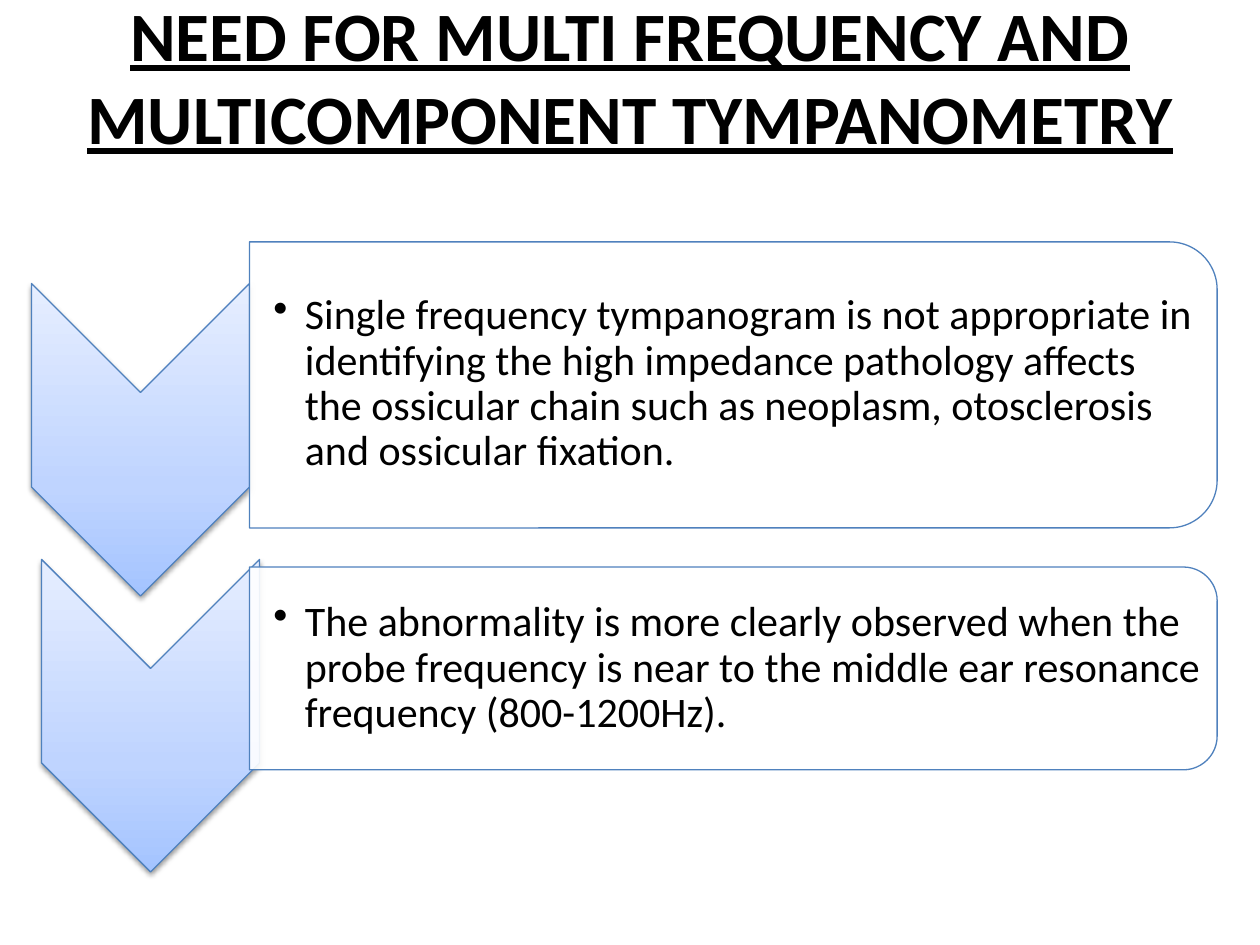
import pptx
import pptx.util
import pptx.oxml
import pptx.oxml.ns
import pptx.dml.color
import pptx.enum.shapes
import pptx.enum.text

Inches = pptx.util.Inches
Pt = pptx.util.Pt
Shapes = pptx.enum.shapes.MSO_SHAPE
Middle = pptx.enum.text.MSO_ANCHOR.MIDDLE
NAMESPACE = 'xmlns:a="http://schemas.openxmlformats.org/drawingml/2006/main"'

TITLE = "NEED FOR MULTI FREQUENCY AND MULTICOMPONENT TYMPANOMETRY\v"
STEPS = [
    {
        "text": "Single frequency tympanogram is not appropriate in identifying the high "
                "impedance pathology affects the ossicular chain such as neoplasm, "
                "otosclerosis and ossicular fixation.",
        "chevron": (0.25, 2.25), "panel": (1.98, 1.92, 7.68, 2.27), "words": (1.98, 2.03, 7.57, 2.04),
    },
    {
        "text": "The abnormality is more clearly observed when the probe frequency is near "
                "to the middle ear resonance frequency (800-1200Hz).",
        "chevron": (0.33, 4.44), "panel": (1.98, 4.5, 7.68, 1.61), "words": (1.98, 4.58, 7.6, 1.45),
    },
]
CHEVRON_SIZE = (1.73, 2.48)
GRADIENT = [(0, "A4C4FF"), (35, "BFD4FF"), (100, "E6EEFF")]
OUTLINE, PANEL, INK = "4F81BD", "FFFFFF", "000000"


def color(value):
    return pptx.dml.color.RGBColor.from_string(value)


def element(markup):
    return pptx.oxml.parse_xml(markup.replace(" ", f" {NAMESPACE} ", 1))


def style_font(font, size):
    font.name = "Calibri"
    font.size = Pt(size)
    font.color.rgb = color(INK)


def add_turned_shape(page, kind, left, top, width, height):
    shift = (width - height) / 2
    shape = page.shapes.add_shape(
        kind, Inches(left + shift), Inches(top - shift), Inches(height), Inches(width))
    shape.rotation = 90
    shape.shadow.inherit = False
    shape.fill.solid()
    shape.fill.fore_color.rgb = color(PANEL)
    shape.line.color.rgb = color(OUTLINE)
    shape.line.width = Pt(0.75)
    return shape


def add_chevron(page, left, top):
    shape = add_turned_shape(page, Shapes.CHEVRON, left, top, *CHEVRON_SIZE)
    properties = shape.fill._xPr
    stops = "".join(
        f'<a:gs pos="{place * 1000}"><a:srgbClr val="{value}"/></a:gs>' for place, value in GRADIENT)
    gradient = element(
        f'<a:gradFill rotWithShape="0"><a:gsLst>{stops}</a:gsLst>'
        '<a:lin ang="16200000" scaled="0"/></a:gradFill>')
    properties.replace(properties.find(pptx.oxml.ns.qn("a:solidFill")), gradient)
    effects = properties.find(pptx.oxml.ns.qn("a:effectLst"))
    effects.append(element(
        f'<a:outerShdw blurRad="{Pt(3.1)}" dist="{Pt(1.6)}" dir="5400000" rotWithShape="0">'
        '<a:srgbClr val="000000"><a:alpha val="38000"/></a:srgbClr></a:outerShdw>'))


def add_panel(page, place):
    shape = add_turned_shape(page, Shapes.ROUND_2_SAME_RECTANGLE, *place)
    fill = shape.fill._xPr.find(pptx.oxml.ns.qn("a:solidFill"))
    fill[0].append(element('<a:alpha val="90000"/>'))


def add_words(page, place, text):
    box = page.shapes.add_textbox(*map(Inches, place))
    frame = box.text_frame
    frame.word_wrap = True
    frame.vertical_anchor = Middle
    frame.margin_left = Inches(0.19)
    frame.margin_right = frame.margin_top = frame.margin_bottom = Inches(0.02)
    para = frame.paragraphs[0]
    para.text = text
    para.level = 1
    para.line_spacing = 0.9
    properties = para._p.get_or_add_pPr()
    properties.set("marL", str(Inches(0.25)))
    properties.set("indent", str(Inches(-0.25)))
    properties.append(element('<a:buChar char="•"/>'))
    style_font(para.font, 24)


def add_title(page):
    title = page.shapes.title
    title.left, title.top, title.width, title.height = map(Inches, (0.5, 0.3, 9, 1.25))
    frame = title.text_frame
    frame.vertical_anchor = Middle
    para = frame.paragraphs[0]
    para.text = TITLE
    para.alignment = pptx.enum.text.PP_ALIGN.CENTER
    style_font(para.font, 39.6)
    para.font.bold = True
    para.font.underline = True


def main():
    deck = pptx.Presentation()
    deck.slide_width, deck.slide_height = Inches(10), Inches(7.5)
    page = deck.slides.add_slide(deck.slide_layouts[5])
    add_title(page)
    for step in STEPS:
        add_chevron(page, *step["chevron"])
        add_panel(page, step["panel"])
        add_words(page, step["words"], step["text"])
    deck.save("out.pptx")


if __name__ == "__main__":
    main()
